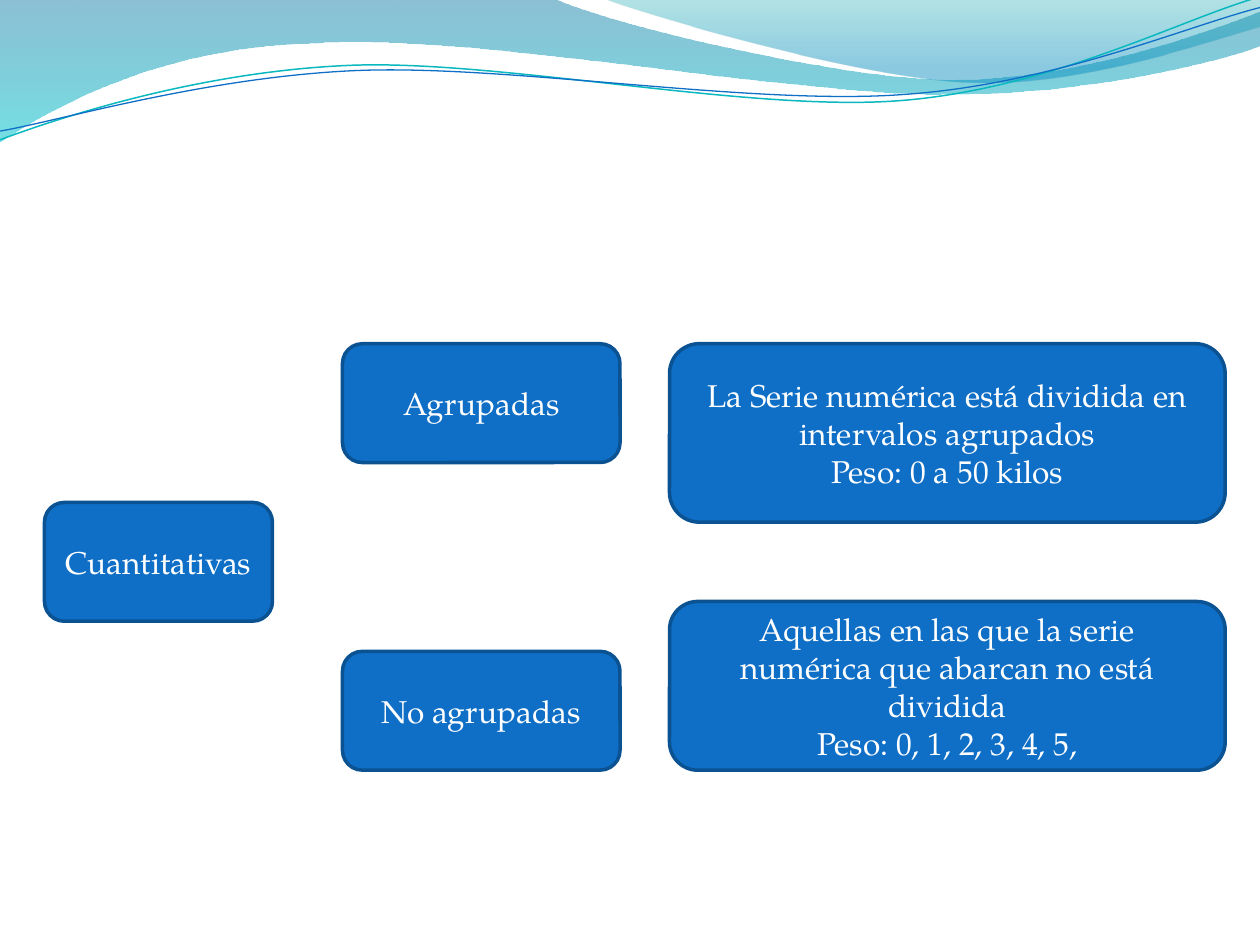
from pptx import Presentation
from pptx.dml.color import RGBColor as RGB
from pptx.enum.shapes import MSO_SHAPE as SHAPE
from pptx.enum.text import MSO_ANCHOR as ANCHOR, PP_ALIGN as ALIGN
from pptx.oxml.ns import qn
from pptx.oxml.xmlchemy import OxmlElement
from pptx.util import Pt

FONT = "TeX Gyre Pagella"
COLORS = {
    "box": "0F6FC6", "border": "0B5292", "text": "FFFFFF",
    "deep": "0074A1", "aqua": "00C6CF", "teal": "00A1A9", "sky": "008BBF",
    "teal_line": "0AB8BF", "blue_line": "0F6FC6",
}

COLUMNS = {"type": (25.4, 130.3), "group": (195.7, 158.6), "detail": (382.6, 317.5)}
BOXES = [
    ("type", 287.1, 67.9, ["Cuantitativas"]),
    ("group", 196.4, 67.9, ["Agrupadas"]),
    ("group", 372.2, 67.9, ["No agrupadas"]),
    ("detail", 196.4, 102,
     ["La Serie numérica está dividida en intervalos agrupados", "Peso: 0 a 50 kilos"]),
    ("detail", 343.7, 96.4,
     ["Aquellas en las que la serie numérica que abarcan no está dividida",
      "Peso: 0, 1, 2, 3, 4, 5,"]),
]

BANDS = [
    ([(0, 0), (316.8, -0.7),
      (342.7, 12.2, 478.1, 45.4, 545.8, 45.4), (614.2, 45.4, 689.8, 18.7, 720, 6.5),
      (720.7, 25.9),
      (707.8, 31.7, 626.4, 54.7, 537.1, 54), (447.8, 54, 275, 20.2, 185, 24.5),
      (92.9, 25.9, 33.1, 59.8, -0.7, 81.4), (0, 0)],
     [(0, "deep", 45), (1, "aqua", 55)]),
    ([(344.9, -0.7),
      (366.5, 7.9, 491, 44.6, 553.7, 46.8), (616.3, 49.7, 691.9, 23, 720, 15.1),
      (720, 0), (344.9, -0.7)],
     [(0, "teal", 30), (0.8, "sky", 45)]),
]
STROKES = [
    ([(0, 79.9), (34.6, 67, 113.8, 41, 199.4, 37.4),
      (284.4, 33.8, 427, 64.1, 513.4, 57.6), (599.8, 51.1, 675.4, 10.8, 718.6, -1.4)],
     "teal_line", 0.85),
    ([(0, 74.9), (33.8, 69.1, 118.1, 43.9, 203.8, 40.3),
      (290.2, 36.7, 429.8, 60.5, 516.2, 54), (601.9, 48.2, 677.5, 15.1, 720, 4.3)],
     "blue_line", 0.75),
]


def color(name):
    return RGB.from_string(COLORS[name])


def add_curve(s, segments, close):
    ends = [(Pt(seg[-2]), Pt(seg[-1])) for seg in segments]
    builder = s.shapes.build_freeform(*ends[0])
    builder.add_line_segments(ends[1:], close=close)
    sp = builder.convert_to_shape()
    sp.shadow.inherit = False
    lines = list(sp._element.iter(qn("a:lnTo")))
    for line, seg in zip(lines, segments[1:]):
        if len(seg) == 2:
            continue
        curve = OxmlElement("a:cubicBezTo")
        for x, y in zip(seg[::2], seg[1::2]):
            pt = OxmlElement("a:pt")
            pt.set("x", str(Pt(x) - sp.left))
            pt.set("y", str(Pt(y) - sp.top))
            curve.append(pt)
        line.getparent().replace(line, curve)
    return sp


def add_band(s, segments, stops):
    sp = add_curve(s, segments, True)
    sp.line.fill.background()
    sp.fill.gradient()
    sp.fill.gradient_angle = 270
    for stop, (position, name, _) in zip(sp.fill.gradient_stops, stops):
        stop.position = position
        stop.color.rgb = color(name)
    for clr, (_, _, opacity) in zip(sp._element.spPr.iter(qn("a:srgbClr")), stops):
        alpha = OxmlElement("a:alpha")
        alpha.set("val", str(opacity * 1000))
        clr.append(alpha)


def add_stroke(s, segments, name, width):
    sp = add_curve(s, segments, False)
    sp.fill.background()
    sp.line.color.rgb = color(name)
    sp.line.width = Pt(width)


def add_box(s, column, top, height, lines):
    left, width = COLUMNS[column]
    sp = s.shapes.add_shape(SHAPE.ROUNDED_RECTANGLE, Pt(left), Pt(top), Pt(width), Pt(height))
    sp.shadow.inherit = False
    sp.fill.solid()
    sp.fill.fore_color.rgb = color("box")
    sp.line.color.rgb = color("border")
    sp.line.width = Pt(2)
    tf = sp.text_frame
    tf.word_wrap = True
    tf.vertical_anchor = ANCHOR.MIDDLE
    for i, line in enumerate(lines):
        p = tf.add_paragraph() if i else tf.paragraphs[0]
        p.alignment = ALIGN.CENTER
        r = p.add_run()
        r.text = line
        r.font.name = FONT
        r.font.size = Pt(18)
        r.font.color.rgb = color("text")


def main():
    prs = Presentation()
    prs.slide_width, prs.slide_height = Pt(720), Pt(540)
    s = prs.slides.add_slide(prs.slide_layouts[6])
    for band in BANDS:
        add_band(s, *band)
    for stroke in STROKES:
        add_stroke(s, *stroke)
    for box in BOXES:
        add_box(s, *box)
    prs.save("out.pptx")


if __name__ == "__main__":
    main()
